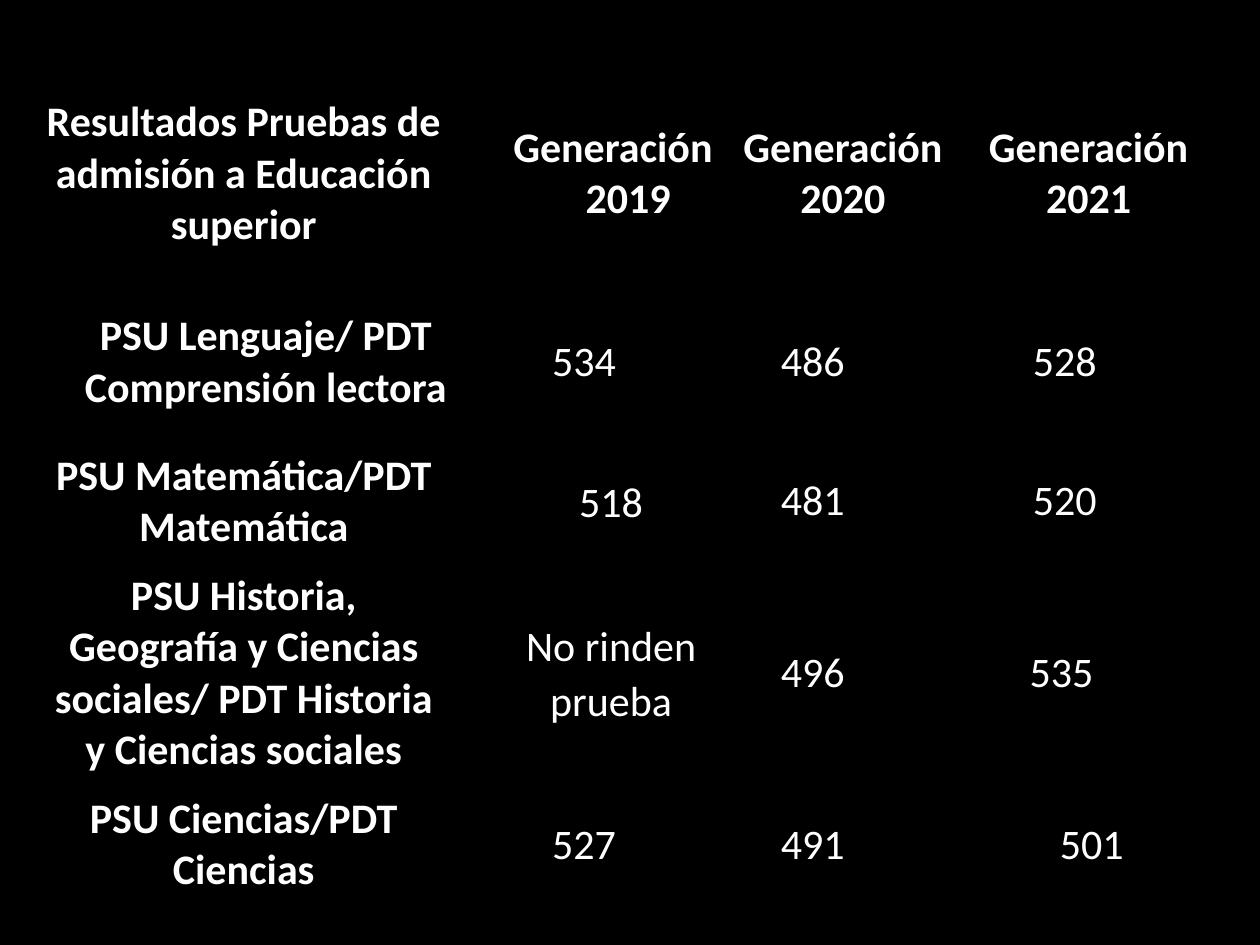
from lxml import etree
from pptx import Presentation
from pptx.dml.color import RGBColor
from pptx.enum.text import MSO_ANCHOR, PP_ALIGN
from pptx.oxml.ns import qn
from pptx.util import Inches, Pt

CENTER, MIDDLE = PP_ALIGN.CENTER, MSO_ANCHOR.MIDDLE
COLORS = {"background": "000000", "border": "000000", "text": "FFFFFF"}
FONT = {"name": "Calibri", "size": Pt(24)}

COL_WIDTHS = [3.5, 1.98, 1.7, 2.25]
ROW_HEIGHTS = [1.88, 1.11, 1.1, 1.58, 1.1]
ROWS = [
    ["Resultados Pruebas de admisión a Educación superior",
     "Generación 2019", "Generación 2020", "Generación 2021"],
    ["PSU Lenguaje/ PDT Comprensión lectora", "534", "486", "528"],
    ["PSU Matemática/PDT Matemática", "518", "481", "520"],
    ["PSU Historia, Geografía y Ciencias sociales/ PDT Historia y Ciencias sociales",
     "No rinden prueba", "496", "535"],
    ["PSU Ciencias/PDT Ciencias", "527", "491", "501"],
]
# Right insets move the centred text to the left of the cell's middle
RIGHT_INSETS = [
    [0.35, 0.08, 0, 0.05],
    [0, 0.43, 0.48, 0.43],
    [0.35, 0, 0.48, 0.43],
    [0.35, 0, 0.48, 0.48],
    [0.35, 0.43, 0.48, 0],
]
SPACED_CELLS = {(2, 1), (3, 1)}


def add_borders(cell):
    tcPr = cell._tc.get_or_add_tcPr()
    for side in ("a:lnL", "a:lnR", "a:lnT", "a:lnB"):
        ln = etree.SubElement(tcPr, qn(side), w=str(Pt(1.5)))
        fill = etree.SubElement(ln, qn("a:solidFill"))
        etree.SubElement(fill, qn("a:srgbClr"), val=COLORS["border"])


prs = Presentation()
prs.slide_width, prs.slide_height = Inches(10), Inches(7.5)
s = prs.slides.add_slide(prs.slide_layouts[6])
s.background.fill.solid()
s.background.fill.fore_color.rgb = RGBColor.from_string(COLORS["background"])

table = s.shapes.add_table(
    len(ROWS), len(COL_WIDTHS), Inches(0.36), Inches(0.44),
    Inches(sum(COL_WIDTHS)), Inches(sum(ROW_HEIGHTS))).table
table.horz_banding = False
for column, width in zip(table.columns, COL_WIDTHS):
    column.width = Inches(width)
for row, height in zip(table.rows, ROW_HEIGHTS):
    row.height = Inches(height)

for i, texts in enumerate(ROWS):
    for j, text in enumerate(texts):
        cell = table.cell(i, j)
        add_borders(cell)
        cell.fill.background()
        cell.vertical_anchor = MIDDLE
        cell.margin_left = cell.margin_top = cell.margin_bottom = 0
        cell.margin_right = Inches(RIGHT_INSETS[i][j])

        p = cell.text_frame.paragraphs[0]
        p.alignment = CENTER
        if (i, j) in SPACED_CELLS:
            p.line_spacing = 1.07
            p.space_after = Pt(8)
        r = p.add_run()
        r.text = text
        for key, value in FONT.items():
            setattr(r.font, key, value)
        r.font.bold = i == 0 or j == 0
        r.font.color.rgb = RGBColor.from_string(COLORS["text"])

# The first year's heading has a hanging indent
pPr = table.cell(0, 1).text_frame.paragraphs[0]._p.get_or_add_pPr()
pPr.set("marL", str(Inches(0.35)))
pPr.set("indent", str(Inches(-0.24)))

prs.save("out.pptx")
